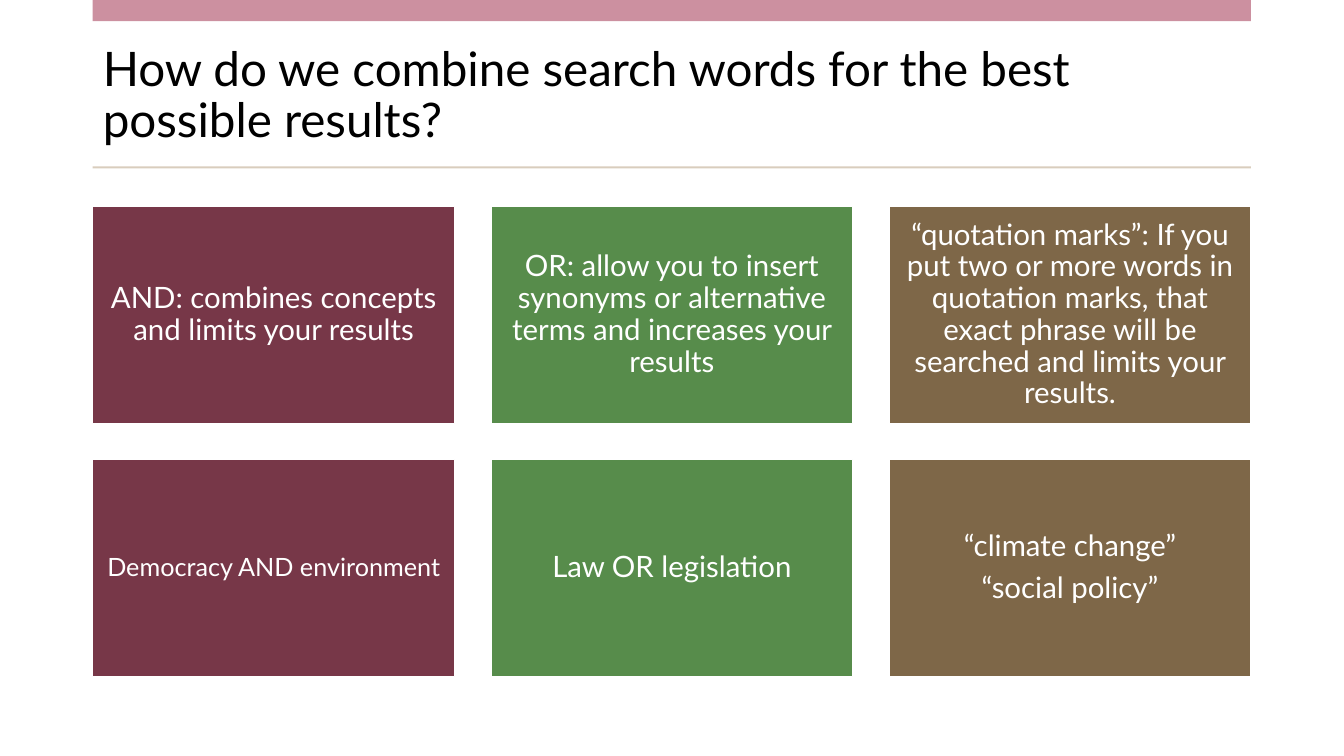
from dataclasses import dataclass

from pptx import Presentation
from pptx.dml.color import RGBColor
from pptx.enum.shapes import MSO_SHAPE
from pptx.enum.text import MSO_ANCHOR, MSO_AUTO_SIZE, PP_ALIGN
from pptx.shapes.autoshape import Shape
from pptx.slide import Slide
from pptx.text.text import TextFrame
from pptx.util import Pt

FONT = "Lato"
COLORS = {
    "white": "FFFFFF",
    "black": "000000",
    "pink": "CC90A0",
    "sand": "D9CDBD",
    "wine": "773748",
    "green": "578C4B",
    "brown": "7E6748",
}

# Page and card grid, in points
LEFT, WIDTH = 66.24, 827.28
CARD_W, CARD_H = 258.48, 154.8
CARD_TOP = 147.6
COL_STEP = (WIDTH - CARD_W) / 2
ROW_STEP = 180.72


@dataclass
class Card:
    row: int
    col: int
    color: str
    lines: list[str]
    size: float = 21
    inset: float = 6.3


CARDS = [
    Card(0, 0, "wine", ["AND: combines concepts and limits your results"]),
    Card(0, 1, "green", ["OR: allow you to insert synonyms or alternative terms "
                         "and increases your results"]),
    Card(0, 2, "brown", ["“quotation marks”: If you put two or more words in quotation "
                         "marks, that exact phrase will be searched and limits your results."]),
    Card(1, 0, "wine", ["Democracy AND environment"], size=18, inset=5.04),
    Card(1, 1, "green", ["Law OR legislation"]),
    Card(1, 2, "brown", ["“climate change”", "“social policy”"]),
]


def rgb(name: str) -> RGBColor:
    return RGBColor.from_string(COLORS[name])


def add_rect(s: Slide, x: float, y: float, w: float, h: float, color: str) -> Shape:
    sp = s.shapes.add_shape(MSO_SHAPE.RECTANGLE, Pt(x), Pt(y), Pt(w), Pt(h))
    sp.shadow.inherit = False
    sp.fill.solid()
    sp.fill.fore_color.rgb = rgb(color)
    sp.line.fill.background()
    return sp


def write(tf: TextFrame, lines: list[str], size: float, color: str,
          align: PP_ALIGN, after: float = 0) -> None:
    tf.word_wrap = True
    tf.auto_size = MSO_AUTO_SIZE.NONE
    tf.vertical_anchor = MSO_ANCHOR.MIDDLE
    for i, line in enumerate(lines):
        p = tf.paragraphs[0] if i == 0 else tf.add_paragraph()
        p.alignment = align
        p.line_spacing = 0.9
        p.space_before = Pt(0)
        p.space_after = Pt(after)
        r = p.add_run()
        r.text = line
        r.font.name = FONT
        r.font.size = Pt(size)
        r.font.color.rgb = rgb(color)


def add_card(s: Slide, card: Card) -> None:
    sp = add_rect(s, LEFT + card.col * COL_STEP, CARD_TOP + card.row * ROW_STEP,
                  CARD_W, CARD_H, card.color)
    sp.line.color.rgb = rgb("white")
    sp.line.width = Pt(1)
    tf = sp.text_frame
    tf.margin_left = tf.margin_right = Pt(card.inset)
    tf.margin_top = tf.margin_bottom = Pt(card.inset)
    write(tf, card.lines, card.size, "white", PP_ALIGN.CENTER, after=0.35 * card.size)


def main() -> None:
    prs = Presentation()
    prs.slide_width, prs.slide_height = Pt(960), Pt(540)
    s = prs.slides.add_slide(prs.slide_layouts[5])

    # Title
    title = s.shapes.title
    title.left, title.top = Pt(LEFT), Pt(26.64)
    title.width, title.height = Pt(WIDTH), Pt(84.96)
    write(title.text_frame, ["How do we combine search words for the best possible results?"],
          34, "black", PP_ALIGN.LEFT)

    # Top band and rule under the title
    add_rect(s, LEFT, 0, WIDTH, 15.12, "pink")
    add_rect(s, LEFT, 118.8, WIDTH, 1.44, "sand")

    # Operators above, examples below
    for card in CARDS:
        add_card(s, card)

    prs.save("out.pptx")


if __name__ == "__main__":
    main()
